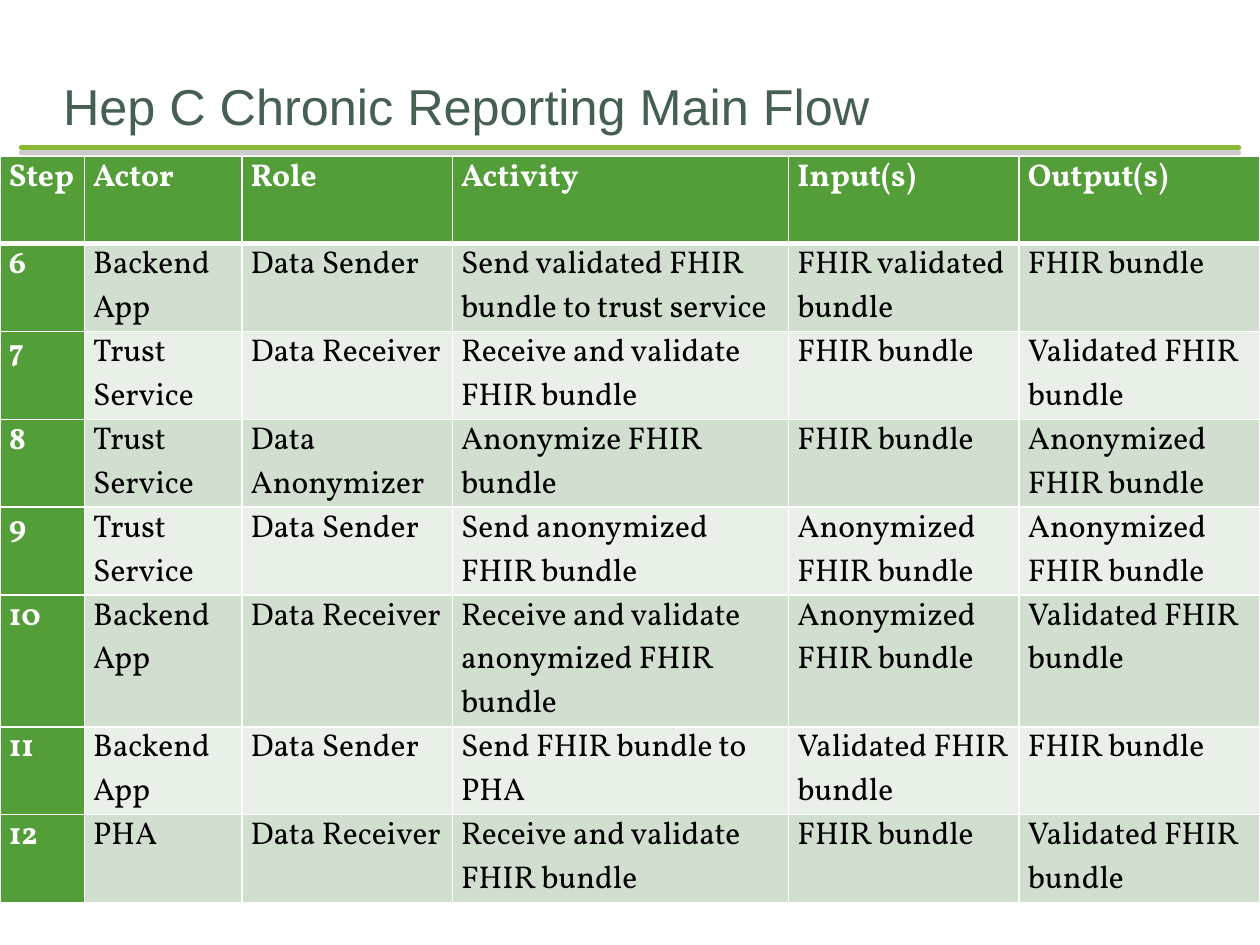
from lxml import etree
from pptx import Presentation
from pptx.dml.color import RGBColor
from pptx.enum.shapes import MSO_CONNECTOR
from pptx.enum.text import MSO_ANCHOR, MSO_AUTO_SIZE, PP_ALIGN
from pptx.oxml import parse_xml
from pptx.oxml.ns import nsdecls, qn
from pptx.util import Inches, Pt

STRAIGHT = MSO_CONNECTOR.STRAIGHT
BOTTOM = MSO_ANCHOR.BOTTOM
NO_AUTOFIT = MSO_AUTO_SIZE.NONE
LEFT = PP_ALIGN.LEFT
TITLE_ONLY = 5

COLORS = {
    "title": "455F51",
    "rule": "8AB833",
    "shadow": "808080",
    "header": "549E39",
    "band_dark": "D1DFCE",
    "band_light": "E9F0E8",
    "white": "FFFFFF",
    "black": "000000",
}
COLUMN_WIDTHS = (0.67, 1.25, 1.67, 2.67, 1.83, 1.91)
LINE_HEIGHT = 0.347
ROW_LINES = (2, 2, 2, 2, 2, 3, 2, 2)
FLOW = (
    ("Step", "Actor", "Role", "Activity", "Input(s)", "Output(s)"),
    ("6", "Backend App", "Data Sender", "Send validated FHIR bundle to trust service",
     "FHIR validated bundle", "FHIR bundle"),
    ("7", "Trust Service", "Data Receiver", "Receive and validate FHIR bundle",
     "FHIR bundle", "Validated FHIR bundle"),
    ("8", "Trust Service", "Data Anonymizer", "Anonymize FHIR bundle",
     "FHIR bundle", "Anonymized FHIR bundle"),
    ("9", "Trust Service", "Data Sender", "Send anonymized FHIR bundle",
     "Anonymized FHIR bundle", "Anonymized FHIR bundle"),
    ("10", "Backend App", "Data Receiver", "Receive and validate anonymized FHIR bundle",
     "Anonymized FHIR bundle", "Validated FHIR bundle"),
    ("11", "Backend App", "Data Sender", "Send FHIR bundle to PHA",
     "Validated FHIR bundle", "FHIR bundle"),
    ("12", "PHA", "Data Receiver", "Receive and validate FHIR bundle",
     "FHIR bundle", "Validated FHIR bundle"),
)


def rgb(name):
    return RGBColor.from_string(COLORS[name])


def set_attributes(target, values):
    for name, value in values.items():
        setattr(target, name, value)


def style_font(font, color, **values):
    set_attributes(font, values)
    font.color.rgb = rgb(color)


def place_title(slide, left, top, width, height):
    title = slide.shapes.title
    set_attributes(title, {"left": left, "top": top, "width": width, "height": height})
    frame = title.text_frame
    frame.text = "Hep C Chronic Reporting Main Flow"
    set_attributes(frame, {
        "margin_left": 0, "margin_top": Inches(0.05), "margin_right": 0,
        "margin_bottom": 0, "vertical_anchor": BOTTOM, "word_wrap": True,
        "auto_size": NO_AUTOFIT,
    })
    heading = frame.paragraphs[0]
    heading.alignment = LEFT
    style_font(heading.runs[0].font, "title", name="Arial", size=Pt(28.8))


def add_title_rule(slide, left, top, width):
    """Draw the round-capped rule with a hard shadow just below it."""
    rule = slide.shapes.add_connector(STRAIGHT, left, top, left + width, top)
    rule.line.color.rgb = rgb("rule")
    rule.line.width = Pt(3)
    properties = rule._element.spPr
    properties.find(qn("a:ln")).set("cap", "rnd")
    properties.append(parse_xml(
        f'<a:effectLst {nsdecls("a")}>'
        f'<a:outerShdw blurRad="0" dist="{Pt(3)}" dir="5400000" rotWithShape="0">'
        f'<a:srgbClr val="{COLORS["shadow"]}"><a:alpha val="40000"/></a:srgbClr>'
        '</a:outerShdw></a:effectLst>'))


def add_borders(cell, top, bottom):
    """Give a cell white borders; top and bottom are widths in points."""
    properties = cell._tc.get_or_add_tcPr()
    for side, width in (("L", 1), ("R", 1), ("T", top), ("B", bottom)):
        border = etree.SubElement(properties, qn(f"a:ln{side}"), w=str(Pt(width)))
        fill = etree.SubElement(border, qn("a:solidFill"))
        etree.SubElement(fill, qn("a:srgbClr"), val=COLORS["white"])


def fill_cell(cell, text, row, column):
    is_heading = row == 0 or column == 0
    band = "band_dark" if row % 2 else "band_light"
    add_borders(cell, top=3 if row == 1 else 1, bottom=3 if row == 0 else 1)
    cell.fill.solid()
    cell.fill.fore_color.rgb = rgb("header" if is_heading else band)
    set_attributes(cell, {
        "margin_left": Inches(0.07), "margin_right": Inches(0.07),
        "margin_top": 0, "margin_bottom": 0,
    })
    cell.text = text
    style_font(cell.text_frame.paragraphs[0].runs[0].font,
               "white" if is_heading else "black",
               name="Vollkorn", size=Pt(18), bold=is_heading)


def add_flow_table(slide, left, top, width, height):
    flow = slide.shapes.add_table(
        len(FLOW), len(COLUMN_WIDTHS), left, top, width, height).table
    for column, column_width in zip(flow.columns, COLUMN_WIDTHS):
        column.width = Inches(column_width)
    for row, lines in zip(flow.rows, ROW_LINES):
        row.height = Inches(lines * LINE_HEIGHT)
    for row, step in enumerate(FLOW):
        for column, text in enumerate(step):
            fill_cell(flow.cell(row, column), text, row, column)


def main():
    presentation = Presentation()
    presentation.slide_width = Inches(10)
    presentation.slide_height = Inches(7.5)
    slide = presentation.slides.add_slide(presentation.slide_layouts[TITLE_ONLY])
    add_title_rule(slide, Inches(0.17), Inches(1.17), Inches(9.66))
    place_title(slide, Inches(0.5), Inches(0.5), Inches(9), Inches(0.58))
    add_flow_table(slide, 0, Inches(1.24), Inches(sum(COLUMN_WIDTHS)),
                   Inches(sum(ROW_LINES) * LINE_HEIGHT))
    presentation.save("out.pptx")


if __name__ == "__main__":
    main()
